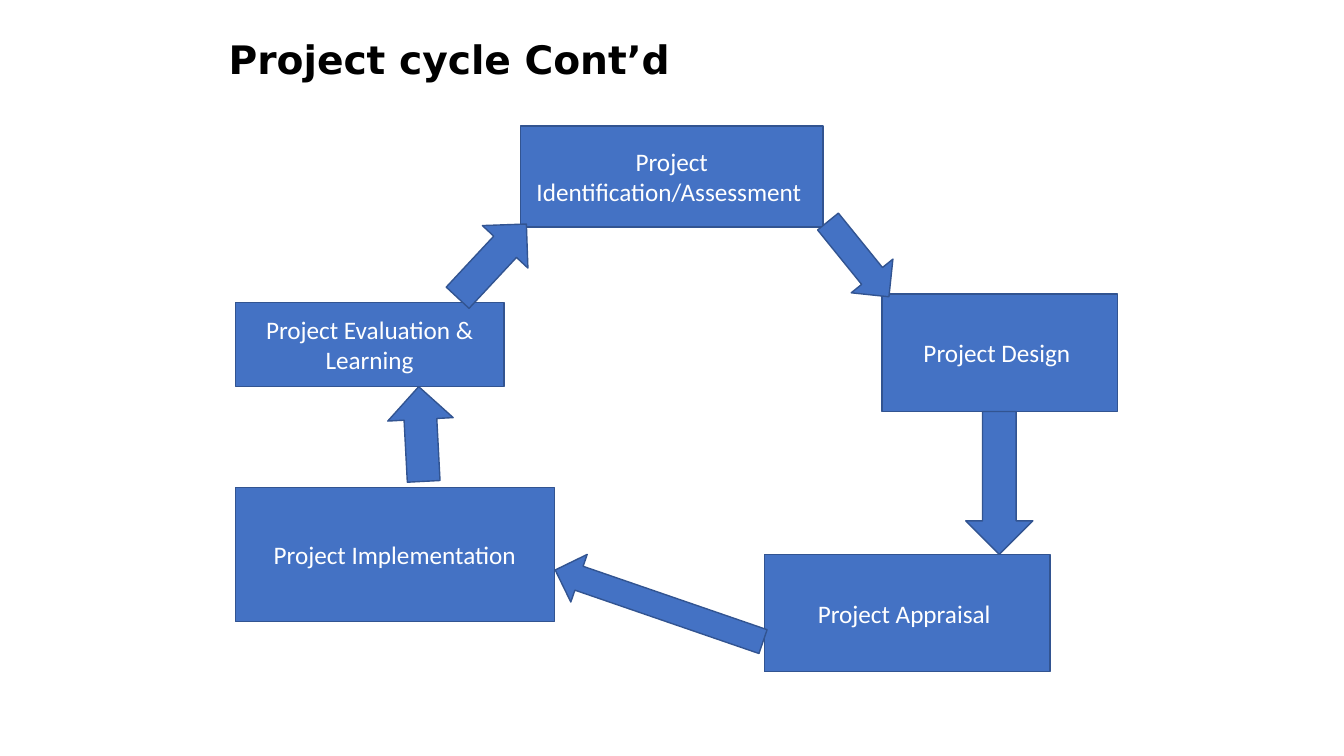
"""Builds the project cycle slide."""
from pptx import Presentation
from pptx.dml.color import RGBColor
from pptx.enum.shapes import MSO_SHAPE
from pptx.enum.text import MSO_ANCHOR, MSO_AUTO_SIZE, PP_ALIGN
from pptx.util import Cm, Pt

RECTANGLE = MSO_SHAPE.RECTANGLE
DOWN, RIGHT = MSO_SHAPE.DOWN_ARROW, MSO_SHAPE.RIGHT_ARROW
LEFT_ALIGN, CENTER = PP_ALIGN.LEFT, PP_ALIGN.CENTER
MIDDLE, NO_AUTOFIT = MSO_ANCHOR.MIDDLE, MSO_AUTO_SIZE.NONE
TITLE_ONLY = 5

COLOURS = {
    "title": "000000",
    "fill": "4472C4",
    "outline": "325491",
    "label": "FFFFFF",
}

STAGES = [
    ("Project Identification/Assessment ", (13.12, 3.18, 7.62, 2.54)),
    ("Project Design ", (22.23, 7.41, 5.93, 2.96)),
    ("Project Appraisal ", (19.26, 13.97, 7.2, 2.96)),
    ("Project Implementation", (5.93, 12.28, 8.04, 3.39)),
    ("Project Evaluation & Learning", (5.93, 7.62, 6.77, 2.12)),
]

STEPS = [
    (DOWN, (24.34, 10.37, 1.69, 3.6), 0),
    (RIGHT, (13.84, 14.63, 5.54, 1.27), 199),
    (RIGHT, (9.42, 10.11, 2.39, 1.65), 267),
    (RIGHT, (11.13, 5.79, 2.54, 1.57), 313),
    (DOWN, (20.96, 5.31, 1.35, 2.44), 321),
]


def colour(key):
    """Return the named colour."""
    return RGBColor.from_string(COLOURS[key])


def write_text(holder, text, *, size=18, font="Calibri", ink="label",
               bold=False, align=CENTER, spacing=1.0):
    """Put one formatted paragraph into a shape."""
    frame = holder.text_frame
    frame.word_wrap = True
    frame.auto_size = NO_AUTOFIT
    frame.vertical_anchor = MIDDLE
    paragraph = frame.paragraphs[0]
    paragraph.alignment = align
    paragraph.line_spacing = spacing
    run = paragraph.add_run()
    run.text = text
    run.font.size = Pt(size)
    run.font.name = font
    run.font.bold = bold
    run.font.color.rgb = colour(ink)


def add_title(slide, text):
    """Place and fill the slide title."""
    title = slide.shapes.title
    title.left, title.top = Cm(5.51), Cm(0.76)
    title.width, title.height = Cm(22.86), Cm(1.57)
    write_text(title, text, size=28, font="DejaVu Sans", ink="title",
               bold=True, align=LEFT_ALIGN, spacing=0.9)


def add_block(slide, kind, bounds, rotation=0):
    """Add a filled and outlined preset shape."""
    block = slide.shapes.add_shape(kind, *map(Cm, bounds))
    block.rotation = rotation
    block.shadow.inherit = False
    block.fill.solid()
    block.fill.fore_color.rgb = colour("fill")
    block.line.color.rgb = colour("outline")
    block.line.width = Pt(1)
    return block


def main():
    """Build and save the slide."""
    deck = Presentation()
    deck.slide_width, deck.slide_height = Cm(33.87), Cm(19.05)
    slide = deck.slides.add_slide(deck.slide_layouts[TITLE_ONLY])
    add_title(slide, "Project cycle Cont’d")
    for label, bounds in STAGES:
        write_text(add_block(slide, RECTANGLE, bounds), label)
    for direction, bounds, rotation in STEPS:
        add_block(slide, direction, bounds, rotation)
    deck.save("out.pptx")


if __name__ == "__main__":
    main()
